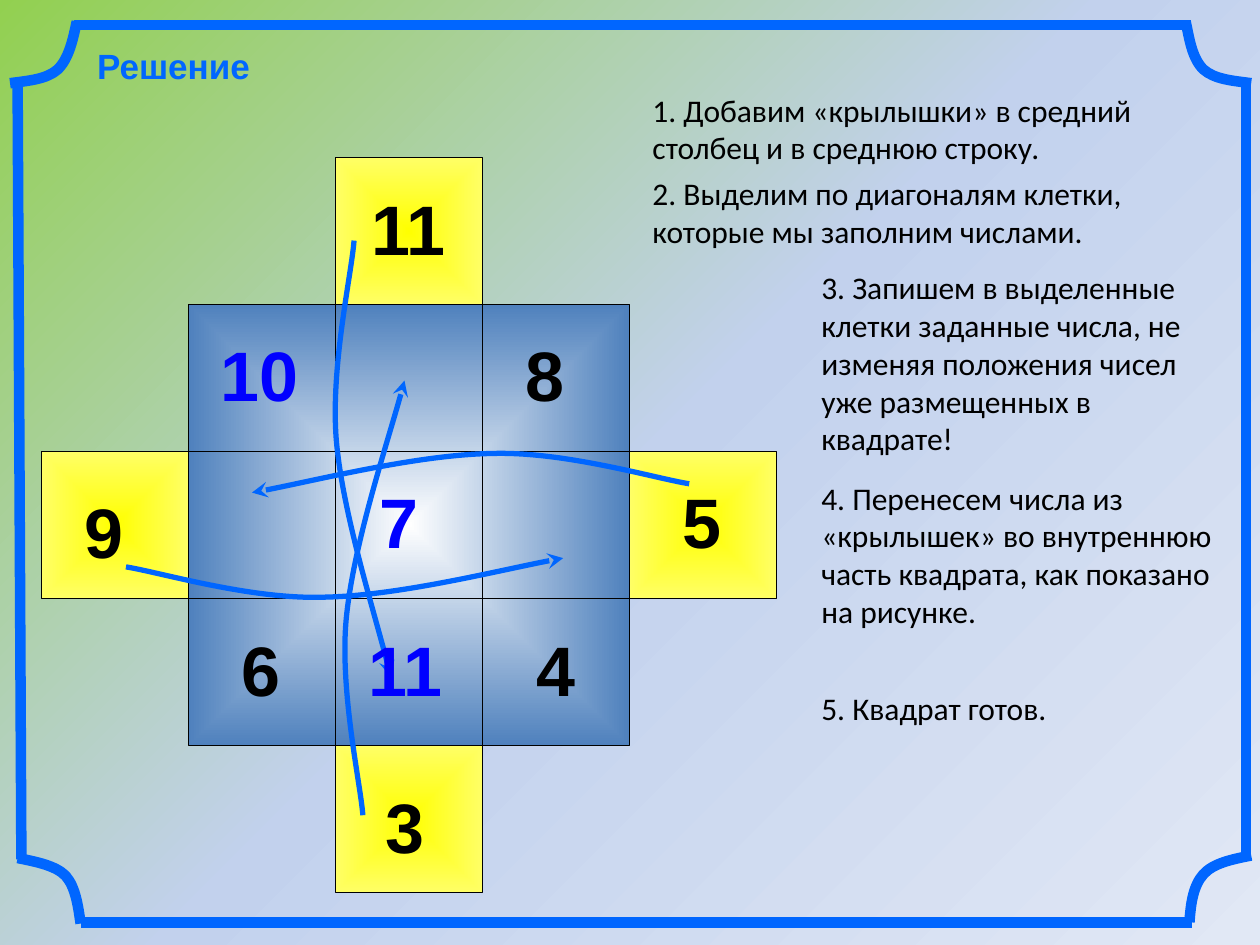
from itertools import product
from lxml import etree
from pptx import Presentation
from pptx.dml.color import RGBColor
from pptx.enum import shapes as sh, text as tx
from pptx.oxml import parse_xml
from pptx.oxml.ns import nsdecls, qn
from pptx.util import Inches, Pt

# Content
BLACK, BLUE, FRAME = "000000", "0000FF", "0066FF"
TITLE = "Решение"
STEPS = [  # left, top, width, height, text
    (5.08, 0.67, 4.59, 0.7, "1. Добавим «крылышки» в средний столбец и в среднюю строку."),
    (5.08, 1.33, 4.59, 0.7, "2. Выделим по диагоналям клетки, которые мы заполним числами."),
    (6.42, 2.08, 3.33, 1.6, "3. Запишем в выделенные клетки заданные числа, "
     "не изменяя положения чисел уже размещенных в квадрате!"),
    (6.42, 3.75, 3.33, 1.6, "4. Перенесем числа из «крылышек» во внутреннюю "
     "часть квадрата, как показано на рисунке."),
    (6.42, 5.42, 3.33, 0.4, "5. Квадрат готов."),
]
NUMS = [  # left, top, text, colour
    (0.57, 3.83, "9", BLACK), (1.65, 2.58, "10", BLUE), (2.85, 1.42, "11", BLACK),
    (1.82, 4.92, "6", BLACK), (2.91, 3.75, "7", BLUE), (4.07, 2.58, "8", BLACK),
    (2.96, 6.17, "3", BLACK), (4.16, 4.92, "4", BLACK), (5.32, 3.75, "5", BLACK),
]
RESULT = (2.83, 4.92, "11", BLUE)
WINGS = [(2, 0), (0, 2), (4, 2), (2, 4)]  # column, row
ARROWS = [  # start, then three points for each curve
    [(1, 4.5), (1.26, 4.54), (1.99, 4.76), (2.57, 4.74), (3.15, 4.73), (4.07, 4.5), (4.47, 4.43)],
    [(2.81, 1.91), (2.79, 2.18), (2.62, 2.92), (2.67, 3.5), (2.72, 4.07), (3.01, 4.98), (3.1, 5.37)],
    [(5.47, 3.84), (5.21, 3.8), (4.48, 3.58), (3.9, 3.6), (3.32, 3.61), (2.4, 3.84), (2, 3.91)],
    [(2.88, 6.47), (2.86, 6.21), (2.69, 5.46), (2.75, 4.89), (2.81, 4.31), (3.11, 3.41), (3.21, 3.02)],
]
CORNERS = [
    [(0.14, 6.81), (0.29, 6.84), (0.44, 6.87), (0.52, 6.95), (0.6, 7.04), (0.62, 7.19), (0.64, 7.33)],
    [(9.93, 6.79), (9.78, 6.82), (9.63, 6.85), (9.55, 6.94), (9.47, 7.03), (9.45, 7.17), (9.44, 7.32)],
    [(9.41, 0.17), (9.44, 0.31), (9.46, 0.46), (9.55, 0.55), (9.64, 0.63), (9.78, 0.64), (9.93, 0.66)],
    [(0.61, 0.17), (0.58, 0.31), (0.55, 0.46), (0.46, 0.55), (0.37, 0.63), (0.23, 0.64), (0.08, 0.66)],
]
SIDES = [(0.59, 0.2, 9.45, 0.2), (0.64, 7.32, 9.46, 7.32),
         (9.89, 0.66, 9.89, 6.82), (0.14, 0.66, 0.17, 6.82)]
CELL, LEFT, TOP = 3.5 / 3, 0.33, 1.25
CENTRE = '<a:path path="shape"><a:fillToRect l="50000" t="50000" r="50000" b="50000"/></a:path>'
SLANT = '<a:lin ang="2700000" scaled="0"/>'

prs = Presentation()
prs.slide_width, prs.slide_height = Inches(10), Inches(7.5)
slide = prs.slides.add_slide(prs.slide_layouts[5])


def rgb(code):
    return RGBColor.from_string(code)


def blend(fill, root, stops, course):
    fill.gradient()
    old = root.find(".//" + qn("a:gradFill"))
    marks = "".join(f'<a:gs pos="{pos * 1000}"><a:srgbClr val="{code}"/></a:gs>'
                    for pos, code in stops)
    new = parse_xml(f'<a:gradFill {nsdecls("a")} rotWithShape="1">'
                    f'<a:gsLst>{marks}</a:gsLst>{course}</a:gradFill>')
    old.getparent().replace(old, new)


def stroke(shape, code, width):
    shape.line.color.rgb = rgb(code)
    shape.line.width = Pt(width)


def square(col, row, size=1, stops=None, edge=True):
    box = slide.shapes.add_shape(
        sh.MSO_SHAPE.RECTANGLE, Inches(LEFT + col * CELL), Inches(TOP + row * CELL),
        Inches(size * CELL), Inches(size * CELL))
    box.shadow.inherit = False
    if stops:
        blend(box.fill, box._element, stops, CENTRE)
    else:
        box.fill.background()
    if edge:
        stroke(box, BLACK, 0.75)
    else:
        box.line.fill.background()


def curve(points, width, head=False):
    pts = [(Inches(x), Inches(y)) for x, y in points]
    pen = slide.shapes.build_freeform(*pts[0])
    pen.add_line_segments(pts[1:], close=False)
    shape = pen.convert_to_shape()
    shape.shadow.inherit = False
    shape.fill.background()
    stroke(shape, FRAME, width)
    # Turn every three line segments into one Bezier curve
    segs = list(shape._element.iter(qn("a:lnTo")))
    for i in range(0, len(segs), 3):
        bend = etree.Element(qn("a:cubicBezTo"))
        segs[i].addprevious(bend)
        for seg in segs[i:i + 3]:
            bend.append(seg[0])
            seg.getparent().remove(seg)
    if head:
        etree.SubElement(shape.line._get_or_add_ln(), qn("a:tailEnd"), type="stealth")


def write(shape, words, size, font, code, bold=False, wrap=False):
    frame = shape.text_frame
    frame.text = words
    frame.word_wrap = wrap
    frame.auto_size = tx.MSO_AUTO_SIZE.SHAPE_TO_FIT_TEXT
    frame.vertical_anchor = tx.MSO_ANCHOR.TOP
    par = frame.paragraphs[0]
    par.alignment = tx.PP_ALIGN.LEFT
    par.font.size, par.font.name, par.font.bold = Pt(size), font, bold
    par.font.color.rgb = rgb(code)


def textbox(*place):
    return slide.shapes.add_textbox(*map(Inches, place))


def number(x, y, words, code):
    width = 0.2 + 0.31 * len(words)
    write(textbox(x, y, width, 0.77), words, 40, "Arial", code, bold=True)


# Background and title
blend(slide.background.fill, slide._element,
      [(0, "92D050"), (50, "C2D1ED"), (100, "E1E8F5")], SLANT)
title = slide.shapes.title
title.left, title.top, title.width, title.height = map(Inches, (0.67, 0.3, 1.42, 0.43))
write(title, TITLE, 20, "Arial", FRAME, bold=True)

# Wings, the inner square and its grid
for col, row in WINGS:
    square(col, row, stops=[(0, "FFFF00"), (100, "FFFF66")])
square(1, 1, 3, [(0, "FFFFFF"), (100, "4F81BD")], edge=False)
for row, col in product(range(1, 4), repeat=2):
    square(col, row)

# Numbers and the arrows that move them
for item in NUMS:
    number(*item)
for points in ARROWS:
    curve(points, 3, head=True)

# Frame
for ends in SIDES:
    side = slide.shapes.add_connector(sh.MSO_CONNECTOR.STRAIGHT, *map(Inches, ends))
    stroke(side, FRAME, 6)
    etree.SubElement(side._element.spPr, qn("a:effectLst"))
for points in CORNERS:
    curve(points, 6)

# Steps and the last number
for *place, words in STEPS:
    write(textbox(*place), words, 18, "Calibri", BLACK, wrap=True)
number(*RESULT)

prs.save("out.pptx")
